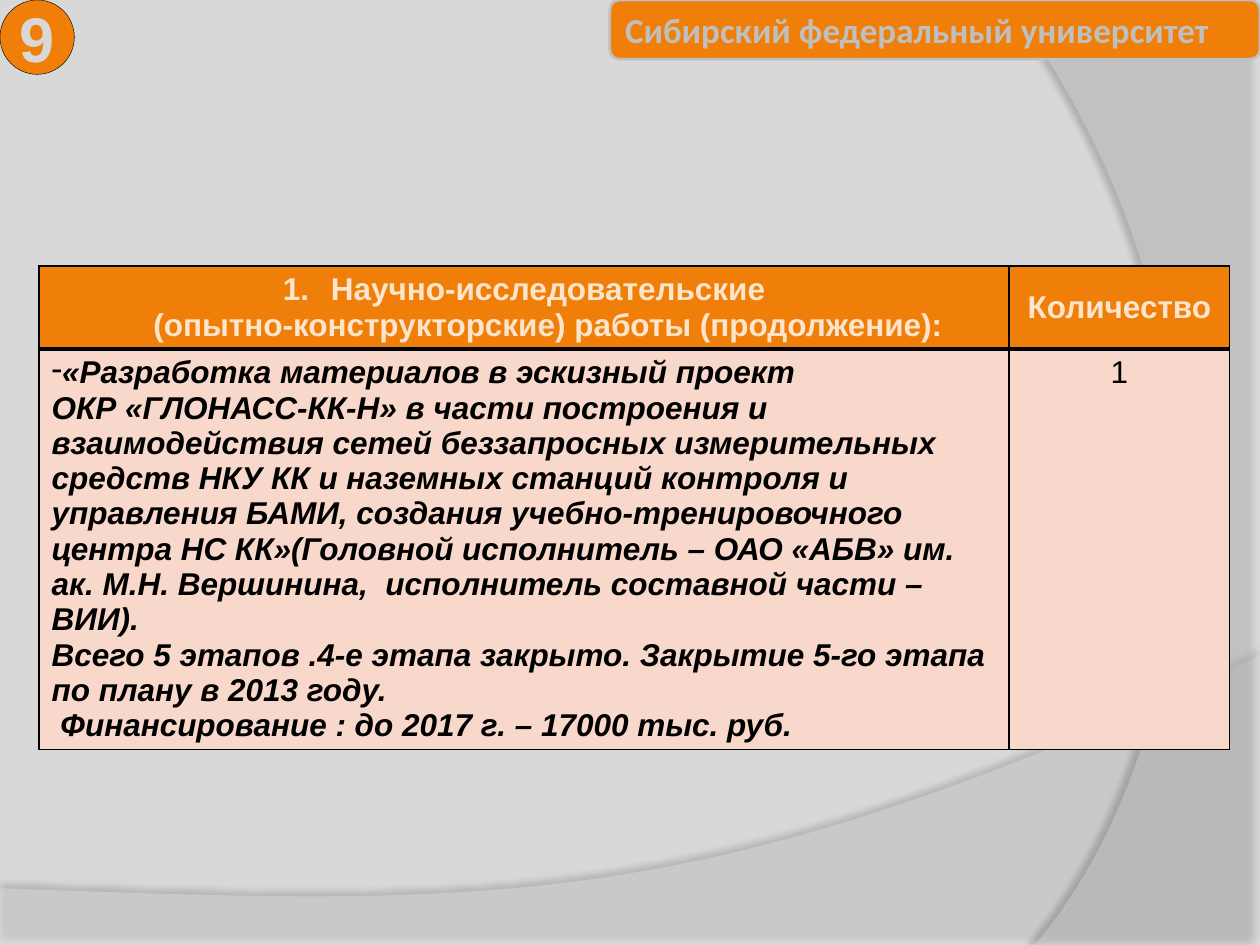
import pptx
import pptx.util
import pptx.dml.color
import pptx.enum.shapes
import pptx.enum.text
import pptx.oxml
import pptx.oxml.ns

Inches = pptx.util.Inches
Pt = pptx.util.Pt
RGBColor = pptx.dml.color.RGBColor
Align = pptx.enum.text.PP_ALIGN
Anchor = pptx.enum.text.MSO_ANCHOR
Preset = pptx.enum.shapes.MSO_SHAPE

BACKGROUND = RGBColor(0xD8, 0xD8, 0xD8)
LOWER_WAVE = RGBColor(0xE1, 0xE1, 0xE1)
RIGHT_WAVE = RGBColor(0xDC, 0xDC, 0xDC)
ORANGE = RGBColor(0xF0, 0x7F, 0x09)
SILVER = RGBColor(0xBF, 0xBF, 0xBF)
CREAM = RGBColor(0xFD, 0xE5, 0xCD)
PINK = RGBColor(0xF9, 0xD8, 0xCC)
BLACK = RGBColor(0, 0, 0)

NAMESPACE = pptx.oxml.ns.nsdecls("a")
THIN, THICK = 1, 3

PROJECT_LINES = [
    "«Разработка материалов в эскизный проект ",
    "ОКР «ГЛОНАСС-КК-Н» в части построения и взаимодействия сетей "
    "беззапросных измерительных средств НКУ КК и наземных станций контроля "
    "и управления БАМИ, создания учебно-тренировочного центра НС КК»"
    "(Головной исполнитель – ОАО «АБВ» им. ак. М.Н. Вершинина,  "
    "исполнитель составной части – ВИИ).",
]
STAGES = ["Всего 5 этапов .4-е этапа закрыто. Закрытие 5-го этапа по плану в 2013 году."]
FUNDING = ["Финансирование : до 2017 г. – 17000 тыс. руб."]


def add_xml(parent, xml):
    parent.append(pptx.oxml.parse_xml(xml))


def curve_points(start, first, second, end, steps=60):
    """Points along a cubic curve, without its start."""
    points = []
    for step in range(1, steps + 1):
        t = step / steps
        weights = ((1 - t) ** 3, 3 * t * (1 - t) ** 2, 3 * t * t * (1 - t), t ** 3)
        points.append(tuple(
            sum(w * p[axis] for w, p in zip(weights, (start, first, second, end)))
            for axis in (0, 1)))
    return points


def add_wave(page, corners, curve, color, opacity, shadow):
    points = corners + curve_points(corners[-1], *curve)
    builder = page.shapes.build_freeform(
        Inches(points[0][0]), Inches(points[0][1]))
    builder.add_line_segments([(Inches(x), Inches(y)) for x, y in points[1:]])
    wave = builder.convert_to_shape()
    wave.fill.solid()
    wave.fill.fore_color.rgb = color
    wave.line.fill.background()
    properties = wave.element.spPr
    tint = properties.find(".//" + pptx.oxml.ns.qn("a:srgbClr"))
    add_xml(tint, f'<a:alpha {NAMESPACE} val="{opacity * 1000}"/>')
    alpha, blur, distance, angle = shadow
    add_xml(properties,
            f'<a:effectLst {NAMESPACE}><a:outerShdw blurRad="{Pt(blur)}" '
            f'dist="{Pt(distance)}" dir="{angle * 60000}" algn="ctr" rotWithShape="0">'
            f'<a:srgbClr val="000000"><a:alpha val="{alpha * 1000}"/></a:srgbClr>'
            '</a:outerShdw></a:effectLst>')


def write(para, lines, size, color, font="Arial", bold=True, italic=False,
          align=Align.LEFT):
    para.alignment = align
    for index, line in enumerate(lines):
        if index:
            para.add_line_break()
        span = para.add_run()
        span.text = line
        span.font.size = Pt(size)
        span.font.name = font
        span.font.bold = bold
        span.font.italic = italic
        span.font.color.rgb = color


def add_badge(page, preset, bounds, line_color, line_width, text, **style):
    box = page.shapes.add_shape(preset, *(Inches(value) for value in bounds))
    box.shadow.inherit = False
    box.fill.solid()
    box.fill.fore_color.rgb = ORANGE
    box.line.color.rgb = line_color
    box.line.width = Pt(line_width)
    box.text_frame.vertical_anchor = Anchor.MIDDLE
    write(box.text_frame.paragraphs[0], [text], **style)
    return box


def indent(para, margin, hanging=0):
    properties = para._p.get_or_add_pPr()
    properties.set("marL", str(Inches(margin)))
    properties.set("indent", str(-Inches(hanging)))
    return properties


def format_cell(cell, color, top, bottom, anchor):
    properties = cell._tc.get_or_add_tcPr()
    for side, width in (("L", THIN), ("R", THIN), ("T", top), ("B", bottom)):
        add_xml(properties,
                f'<a:ln{side} {NAMESPACE} w="{Pt(width)}"><a:solidFill>'
                f'<a:srgbClr val="000000"/></a:solidFill></a:ln{side}>')
    cell.fill.solid()
    cell.fill.fore_color.rgb = color
    cell.vertical_anchor = anchor


def add_works_table(page):
    table = page.shapes.add_table(
        2, 2, Inches(0.31), Inches(2.11), Inches(9.45), Inches(3.8)).table
    for column, width in zip(table.columns, (7.7, 1.75)):
        column.width = Inches(width)
    for row, height in zip(table.rows, (0.66, 3.14)):
        row.height = Inches(height)
    for column in range(2):
        format_cell(table.cell(0, column), ORANGE, THIN, THICK, Anchor.MIDDLE)
        format_cell(table.cell(1, column), PINK, THICK, THIN, Anchor.TOP)

    # Header row
    para = table.cell(0, 0).text_frame.paragraphs[0]
    add_xml(indent(para, 0.38, 0.38),
            f'<a:buAutoNum {NAMESPACE} type="arabicPeriod"/>')
    write(para, ["Научно-исследовательские",
                 "(опытно-конструкторские) работы (продолжение):"],
          18, CREAM, align=Align.CENTER)
    write(table.cell(0, 1).text_frame.paragraphs[0], ["Количество"],
          18, CREAM, align=Align.CENTER)

    # Project row
    frame = table.cell(1, 0).text_frame
    para = frame.paragraphs[0]
    add_xml(indent(para, 0), f'<a:buChar {NAMESPACE} char="-"/>')
    write(para, PROJECT_LINES, 18, BLACK, italic=True)
    write(frame.add_paragraph(), STAGES, 18, BLACK, italic=True)
    para = frame.add_paragraph()
    indent(para, 0.07)
    write(para, FUNDING, 18, BLACK, italic=True)
    write(table.cell(1, 1).text_frame.paragraphs[0], ["1"],
          18, BLACK, bold=False, align=Align.CENTER)


def main():
    deck = pptx.Presentation()
    deck.slide_width, deck.slide_height = Inches(10), Inches(7.5)
    page = deck.slides.add_slide(deck.slide_layouts[6])
    page.background.fill.solid()
    page.background.fill.fore_color.rgb = BACKGROUND

    # Background waves
    add_wave(page, [(0, 7.05), (0, 7.5), (10, 7.5), (10, 5.2)],
             [(5.59, 7.29), (3.91, 7.19), (0, 7.05)],
             LOWER_WAVE, 45, (35, 4, 3.5, 270))
    add_wave(page, [(10, 0.02), (10, 7.5), (8.21, 7.5)],
             [(9.35, 6.19), (10.18, 3), (8, 0)],
             RIGHT_WAVE, 40, (45, 4, 4, 180))

    # University banner, table and page number
    add_badge(page, Preset.ROUNDED_RECTANGLE, (4.84, 0, 5.16, 0.47), SILVER, 1.5,
              "Сибирский федеральный университет",
              size=20, color=SILVER, font="Calibri")
    add_works_table(page)
    number = add_badge(page, Preset.OVAL, (0, 0, 0.59, 0.59), BLACK, 0.25, "9",
                       size=36, color=BACKGROUND, align=Align.CENTER)
    number.text_frame.word_wrap = False

    deck.save("out.pptx")


if __name__ == "__main__":
    main()
